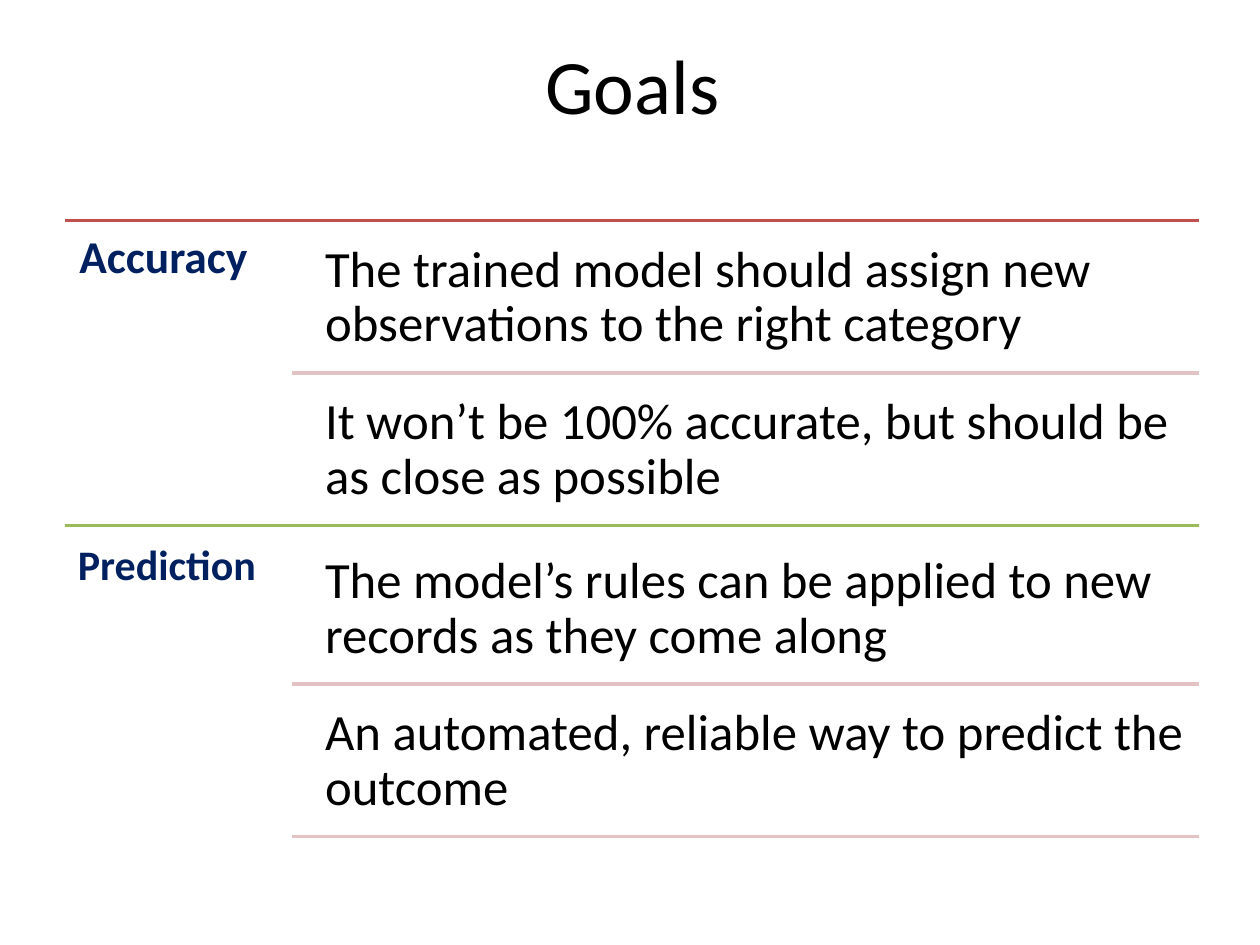
"""Build the Goals slide: two ruled goals with two points each."""
from dataclasses import dataclass

from lxml import etree
from pptx import Presentation
from pptx import util as u
from pptx.dml.color import RGBColor
from pptx.enum import shapes, text
from pptx.oxml import ns
from pptx.slide import Slide

LEFT, RIGHT = 0.52, 9.52
INDENT, TEXT_LEFT = 2.32, 2.46
STEP, GAP, HEIGHT = 1.21, 0.06, 1.15
BLACK, NAVY, PINK = "000000", "002060", "E2C2C2"


@dataclass
class Goal:
    name: str
    rule: float
    top: float
    hue: str
    size: int
    inset: float
    points: tuple[str, ...]


@dataclass
class Box:
    left: float
    top: float
    width: float
    height: float


GOALS = (
    Goal("Accuracy", 1.75, 1.75, "C0504D", 26, 0.11, (
        "The trained model should assign new observations to the right category",
        "It won’t be 100% accurate, but should be as close as possible",
    )),
    Goal("Prediction", 4.17, 4.22, "9BBB59", 24, 0.1, (
        "The model’s rules can be applied to new records as they come along",
        "An automated, reliable way to predict the outcome",
    )),
)


def tint(fmt, code: str) -> None:
    fmt.rgb = RGBColor.from_string(code)


def apply(obj, **vals) -> None:
    for key, val in vals.items():
        setattr(obj, key, val)


def draw_rule(slide: Slide, start: float, y: float, hue: str) -> None:
    rule = slide.shapes.add_connector(
        shapes.MSO_CONNECTOR.STRAIGHT,
        u.Inches(start), u.Inches(y), u.Inches(RIGHT), u.Inches(y))
    rule.line.width = u.Pt(2)
    tint(rule.line.color, hue)
    etree.SubElement(rule.element.spPr, ns.qn("a:effectLst"))


def draw_text(slide: Slide, box: Box, words: str, size: int, hue: str,
              inset: float, bold: bool = False, space: float = 0.9,
              align=text.PP_ALIGN.LEFT, anchor=text.MSO_ANCHOR.TOP) -> None:
    shape = slide.shapes.add_textbox(
        u.Inches(box.left), u.Inches(box.top),
        u.Inches(box.width), u.Inches(box.height))
    frame = shape.text_frame
    sides = ("left", "top", "right", "bottom")
    apply(frame, word_wrap=True, vertical_anchor=anchor,
          **{f"margin_{side}": u.Inches(inset) for side in sides})
    para = frame.paragraphs[0]
    apply(para, alignment=align, line_spacing=space)
    run = para.add_run()
    run.text = words
    apply(run.font, name="Calibri", size=u.Pt(size), bold=bold)
    tint(run.font.color, hue)


def draw_goal(slide: Slide, goal: Goal) -> None:
    for i, point in enumerate(goal.points):
        top = goal.top + GAP + i * STEP
        draw_text(slide, Box(TEXT_LEFT, top, 7.07, HEIGHT), point, 29, BLACK, 0.12)
        draw_rule(slide, INDENT, top + HEIGHT, PINK)
    draw_text(slide, Box(LEFT, goal.top, 1.8, 2.47), goal.name, goal.size,
              NAVY, goal.inset, bold=True)


def main() -> None:
    deck = Presentation()
    apply(deck, slide_width=u.Inches(10), slide_height=u.Inches(7.5))
    slide = deck.slides.add_slide(deck.slide_layouts[6])
    draw_text(slide, Box(LEFT, 0.04, 9, 1.25), "Goals", 44, BLACK, 0.05, space=1.0,
              align=text.PP_ALIGN.CENTER, anchor=text.MSO_ANCHOR.MIDDLE)
    for goal in GOALS:
        draw_goal(slide, goal)
    for goal in GOALS:
        draw_rule(slide, LEFT, goal.rule, goal.hue)
    deck.save("out.pptx")


if __name__ == "__main__":
    main()
